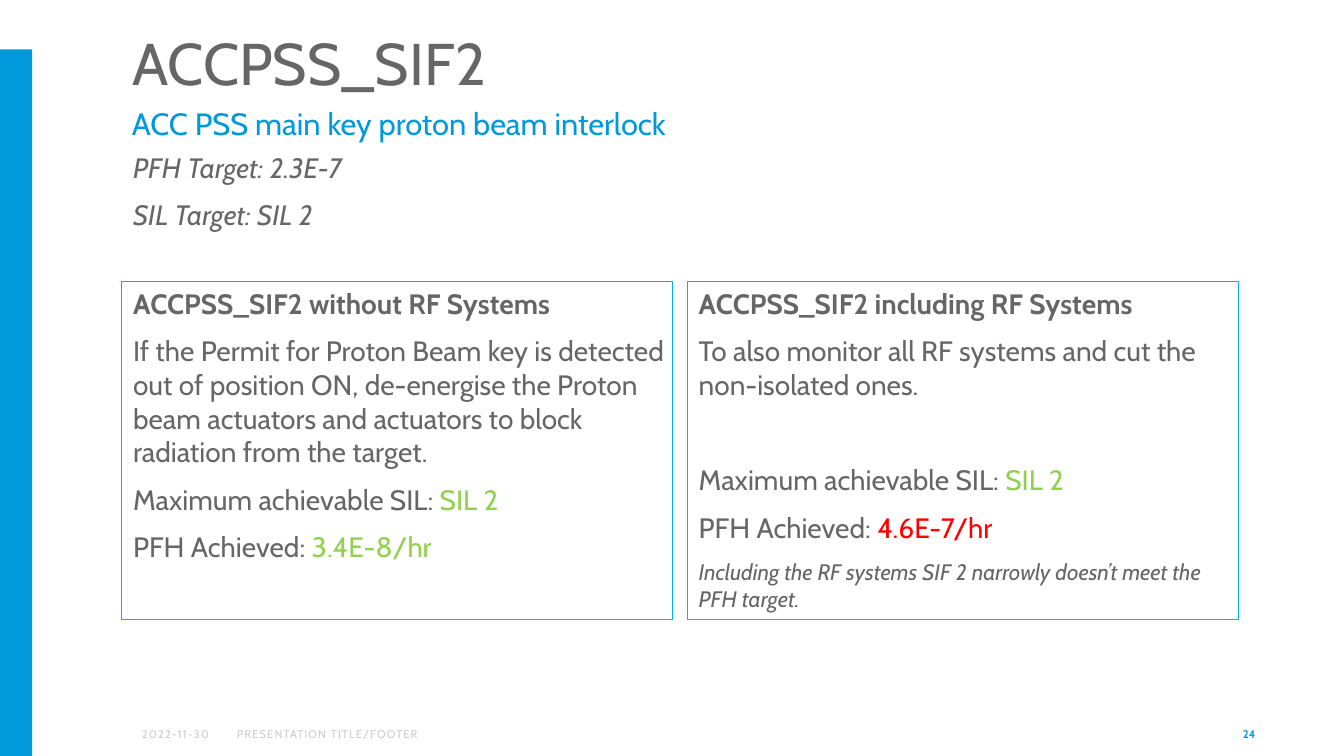
from pptx import Presentation
from pptx.dml.color import RGBColor
from pptx.enum.shapes import MSO_SHAPE
from pptx.enum.text import MSO_ANCHOR, MSO_AUTO_SIZE, PP_ALIGN
from pptx.util import Pt

RECTANGLE = MSO_SHAPE.RECTANGLE
TOP, MIDDLE = MSO_ANCHOR.TOP, MSO_ANCHOR.MIDDLE
LEFT, RIGHT = PP_ALIGN.LEFT, PP_ALIGN.RIGHT
NO_FIT = MSO_AUTO_SIZE.NONE

BLUE = RGBColor(0x00, 0x99, 0xDC)
BORDER = RGBColor(0x00, 0xB0, 0xF0)
GREY = RGBColor(0x66, 0x66, 0x66)
PALE = RGBColor(0xCC, 0xCC, 0xCC)
GREEN = RGBColor(0x92, 0xD0, 0x50)
RED = RGBColor(0xFF, 0x00, 0x00)

EMU_PER_PX = 9144
TITLE_ONLY = 5


class SlideBuilder:
    """Holds the style and the current slide, and adds each kind of element."""

    font = "Cabin"
    body_insets = (11, 5, 2, 5)

    def __init__(self, deck):
        self.page = deck.slides.add_slide(deck.slide_layouts[TITLE_ONLY])

    def px(self, *lengths):
        return [length * EMU_PER_PX for length in lengths]

    def frame(self, shape, insets, anchor=TOP):
        frame = shape.text_frame
        frame.word_wrap = True
        frame.auto_size = NO_FIT
        frame.vertical_anchor = anchor
        (frame.margin_left, frame.margin_top,
         frame.margin_right, frame.margin_bottom) = self.px(*insets)
        return frame

    def style(self, span, size, color, bold=False, italic=False, spacing=0):
        font = span.font
        font.name, font.size = self.font, Pt(size)
        font.bold, font.italic = bold, italic
        font.color.rgb = color
        if spacing:
            span._r.get_or_add_rPr().set("spc", str(spacing))

    def title(self, text, box):
        shape = self.page.shapes.title
        shape.left, shape.top, shape.width, shape.height = self.px(*box)
        frame = self.frame(shape, (10, 5, 10, 2))
        frame.text = text
        para = frame.paragraphs[0]
        para.alignment, para.line_spacing = LEFT, 0.9
        self.style(para.runs[0], 42, GREY)

    def rectangle(self, box, fill=None, line=None):
        shape = self.page.shapes.add_shape(RECTANGLE, *self.px(*box))
        shape.shadow.inherit = False
        if fill is None:
            shape.fill.background()
        else:
            shape.fill.solid()
            shape.fill.fore_color.rgb = fill
        if line is None:
            shape.line.fill.background()
        else:
            shape.line.color.rgb = line
            shape.line.width = Pt(0.75)
        return shape

    def label(self, text, box, size, color, insets=(10, 5, 10, 5),
              anchor=MIDDLE, align=LEFT, bold=False, spacing=0):
        shape = self.page.shapes.add_textbox(*self.px(*box))
        frame = self.frame(shape, insets, anchor)
        frame.text = text
        para = frame.paragraphs[0]
        para.alignment = align
        self.style(para.runs[0], size, color, bold, spacing=spacing)

    def paragraphs(self, shape, entries):
        frame = self.frame(shape, self.body_insets)
        for index, entry in enumerate(entries):
            para = frame.add_paragraph() if index else frame.paragraphs[0]
            para.alignment = LEFT
            para.space_before = Pt(entry.get("before", 10) if index else 0)
            para.text = entry["text"]
            self.style(para.runs[0], entry.get("size", 20), GREY,
                       entry.get("bold", False), entry.get("italic", False))
            if "value" in entry:
                span = para.add_run()
                span.text = entry["value"]
                self.style(span, 20, entry["color"])

    def targets(self, lines, box):
        shape = self.page.shapes.add_textbox(*self.px(*box))
        self.paragraphs(shape, [{"text": line, "italic": True} for line in lines])

    def panel(self, entries, box):
        self.paragraphs(self.rectangle(box, line=BORDER), entries)


PANELS = [
    [
        {"text": "ACCPSS_SIF2 without RF Systems", "bold": True},
        {"text": "If the Permit for Proton Beam key is detected out of position ON, "
                 "de-energise the Proton beam actuators and actuators to block "
                 "radiation from the target."},
        {"text": "Maximum achievable SIL: ", "value": "SIL 2", "color": GREEN},
        {"text": "PFH Achieved: ", "value": "3.4E-8/hr", "color": GREEN},
    ],
    [
        {"text": "ACCPSS_SIF2 including RF Systems", "bold": True},
        {"text": "To also monitor all RF systems and cut the non-isolated ones."},
        {"text": "Maximum achievable SIL: ", "value": "SIL 2", "color": GREEN,
         "before": 44},
        {"text": "PFH Achieved: ", "value": "4.6E-7/hr", "color": RED},
        {"text": "Including the RF systems SIF 2 narrowly doesn’t meet the PFH target.",
         "size": 16, "italic": True},
    ],
]


def main():
    deck = Presentation()
    deck.slide_width, deck.slide_height = 1333 * EMU_PER_PX, 750 * EMU_PER_PX
    slide = SlideBuilder(deck)
    slide.rectangle((0, 49, 32, 701), fill=BLUE)
    slide.title("ACCPSS_SIF2", (121, 29, 1024, 72))
    slide.label("ACC PSS main key proton beam interlock", (121, 102, 1024, 55),
                22, BLUE, insets=(10, 2, 10, 5), anchor=TOP)
    slide.targets(["PFH Target: 2.3E-7", "SIL Target: SIL 2"], (121, 144, 302, 99))
    for column, entries in enumerate(PANELS):
        slide.panel(entries, (121 + column * 561, 279, 546, 336))
    slide.label("2022-11-30", (131, 708, 91, 40), 8, PALE, spacing=80)
    slide.label("PRESENTATION TITLE/FOOTER", (225, 708, 472, 40), 8, PALE, spacing=80)
    slide.label("24", (955, 708, 300, 40), 8, BLUE, align=RIGHT, bold=True)
    deck.save("out.pptx")


if __name__ == "__main__":
    main()
